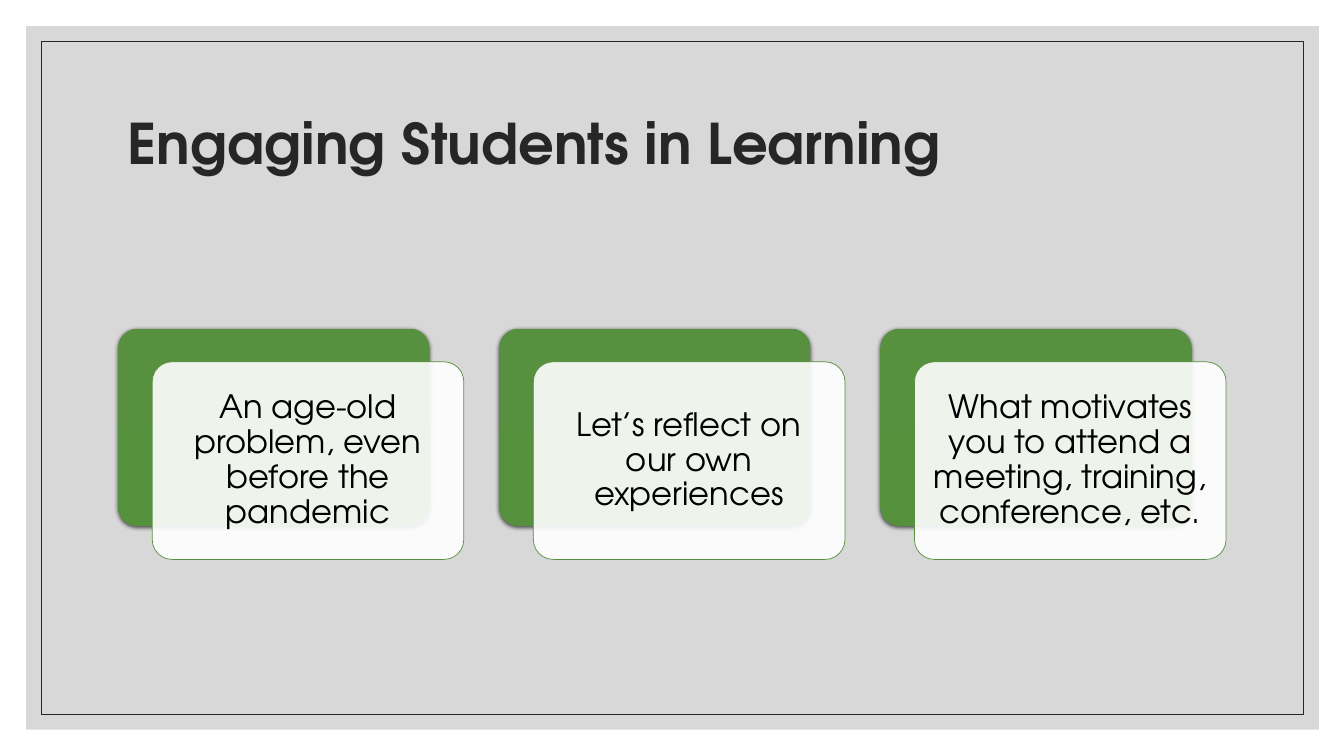
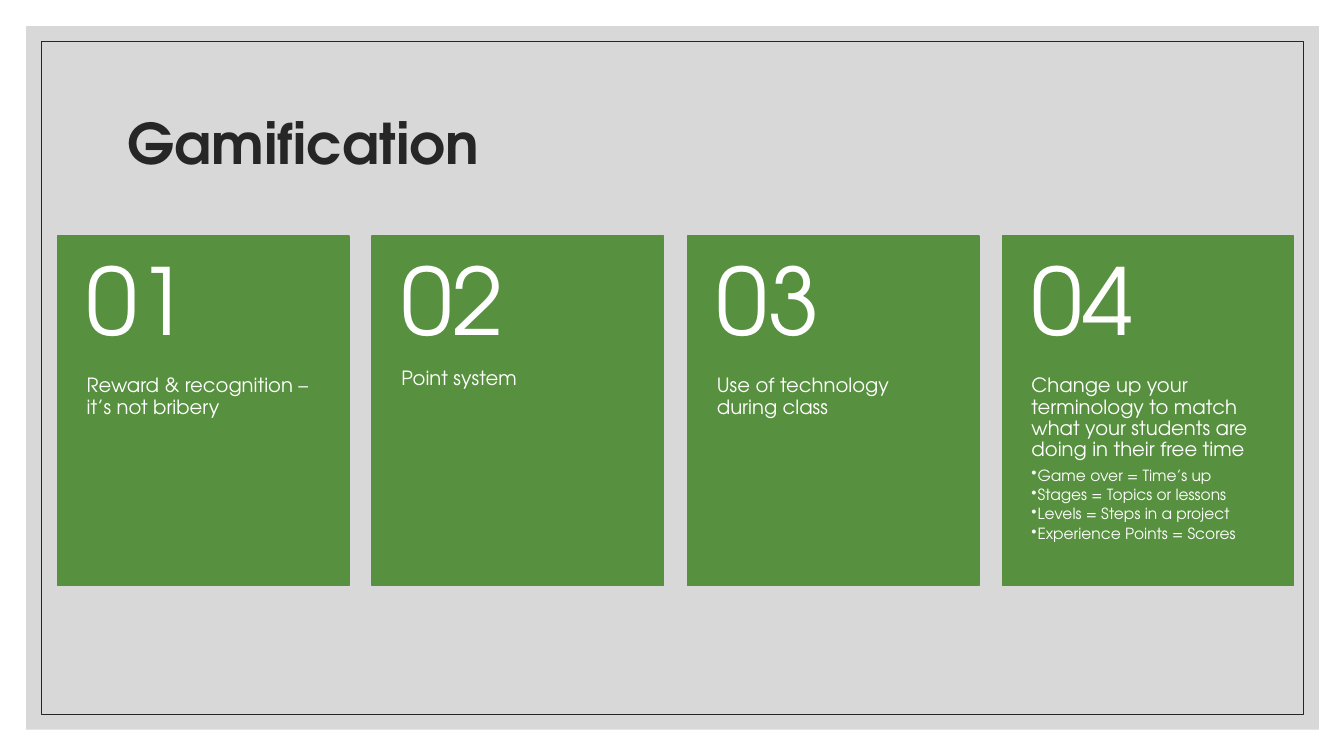
from lxml.etree import SubElement
from pptx import Presentation
from pptx.dml.color import RGBColor
from pptx.enum.shapes import MSO_SHAPE as SHAPE
from pptx.enum.text import MSO_ANCHOR as ANCHOR, PP_ALIGN as ALIGN
from pptx.oxml.ns import qn
from pptx.util import Emu, Pt

FONT = "TeX Gyre Adventor"
COLORS = {
    "paper": "BFBFBF",
    "ink": "262626",
    "green": "57903F",
    "green_end": "55913C",
    "white": "FFFFFF",
    "black": "000000",
}
TITLE_BOX = (117, 70, 1100, 150)
REFLECTIONS = [
    "An age-old problem, even before the pandemic",
    "Let’s reflect on our own experiences",
    "What motivates you to attend a meeting, training, conference, etc.",
]
STRATEGIES = [
    ("Reward & recognition – it’s not bribery", []),
    ("Point system", []),
    ("Use of technology during class", []),
    (
        "Change up your terminology to match what your students are doing in their free time",
        [
            "Game over = Time’s up",
            "Stages = Topics or lessons",
            "Levels = Steps in a project",
            "Experience Points = Scores",
        ],
    ),
]


def px(n):
    """Convert px, 100 to the inch, to EMU."""
    return Emu(round(n * 9144))


def rgb(name):
    return RGBColor.from_string(COLORS[name])


def add_box(s, box, kind=SHAPE.RECTANGLE, fill=None, alpha=None, line=None, weight=0.5):
    sp = s.shapes.add_shape(kind, *map(px, box))
    sp.shadow.inherit = False
    if fill:
        sp.fill.solid()
        sp.fill.fore_color.rgb = rgb(fill)
    else:
        sp.fill.background()
    if alpha:
        color = sp.element.spPr.find(qn("a:solidFill")).find(qn("a:srgbClr"))
        SubElement(color, qn("a:alpha"), val=str(alpha * 1000))
    if line:
        sp.line.color.rgb = rgb(line)
        sp.line.width = Pt(weight)
    else:
        sp.line.fill.background()
    return sp


def add_shadow(sp):
    effects = sp.element.spPr.find(qn("a:effectLst"))
    shadow = SubElement(
        effects, qn("a:outerShdw"), blurRad=str(Pt(3)), dist=str(Pt(1)), dir="5400000", rotWithShape="0"
    )
    color = SubElement(shadow, qn("a:srgbClr"), val=COLORS["black"])
    SubElement(color, qn("a:alpha"), val="63000")


def set_frame(tf, insets=(10, 5, 10, 5), anchor=ANCHOR.MIDDLE):
    tf.word_wrap = True
    tf.vertical_anchor = anchor
    tf.margin_left, tf.margin_top, tf.margin_right, tf.margin_bottom = map(px, insets)


def style_paragraph(p, size, color, after=0.35, align=ALIGN.LEFT, bold=False):
    """Format a paragraph; after is the space below as a share of the size."""
    p.alignment = align
    p.line_spacing = 0.9
    p.space_after = Pt(round(size * after))
    for r in p.runs:
        r.font.name = FONT
        r.font.size = Pt(size)
        r.font.bold = bold
        r.font.color.rgb = rgb(color)


def add_bullet(p):
    p.level = 1
    pPr = p._p.get_or_add_pPr()
    pPr.set("marL", str(px(6)))
    pPr.set("indent", str(px(-6)))
    SubElement(pPr, qn("a:buChar"), char="•")


def add_text(s, box, text, size, color, insets=(10, 5, 10, 5), anchor=ANCHOR.MIDDLE, **style):
    tf = s.shapes.add_textbox(*map(px, box)).text_frame
    set_frame(tf, insets, anchor)
    p = tf.paragraphs[0]
    p.text = text
    style_paragraph(p, size, color, **style)
    return tf


def new_slide(prs, title):
    """Add a slide with the shared grey panel, thin frame and title."""
    s = prs.slides.add_slide(prs.slide_layouts[6])
    add_box(s, (26, 26, 1282, 698), fill="paper", alpha=60)
    add_box(s, (41, 41, 1252, 668), line="ink")
    add_text(s, TITLE_BOX, title, 40, "ink", after=0, bold=True)
    return s


def columns(box, count, width):
    """Yield the left edges of equally spaced columns that fill the box."""
    x, _, w, _ = box
    for i in range(count):
        yield x + round(i * (w - width) / (count - 1))


def add_layered_card(s, box, text):
    """Place a green card with a white panel offset over it."""
    x, y, w, h = box
    dx, dy = 34, 33
    size = (w - dx, h - dy)
    back = add_box(s, (x, y, *size), SHAPE.ROUNDED_RECTANGLE)
    back.fill.gradient()
    back.fill.gradient_angle = 270
    for stop, name in zip(back.fill.gradient_stops, ("green", "green_end")):
        stop.color.rgb = rgb(name)
    add_shadow(back)
    front = add_box(s, (x + dx, y + dy, *size), SHAPE.ROUNDED_RECTANGLE, "white", 90, "green")
    for sp in (back, front):
        sp.adjustments[0] = 0.1
    set_frame(front.text_frame, (10, 10, 10, 10))
    p = front.text_frame.paragraphs[0]
    p.text = text
    style_paragraph(p, 23, "black", align=ALIGN.CENTER)


def add_numbered_card(s, box, number, text, bullets):
    x, y, w, h = box
    head = 139
    add_box(s, box, fill="green", line="green", weight=1)
    tf = add_text(s, (x, y + head, w, h - head), text, 14, "white", (29, 0, 29, 36), ANCHOR.TOP)
    for bullet in bullets:
        p = tf.add_paragraph()
        p.text = bullet
        style_paragraph(p, 11, "white", after=0.15)
        add_bullet(p)
    add_text(s, (x, y, w, head), f"{number:02}", 66, "white", (29, 18, 29, 18))


def build_engaging(prs, box=(117, 326, 1099, 229)):
    s = new_slide(prs, "Engaging Students in Learning")
    _, y, _, h = box
    width = 343
    for x, text in zip(columns(box, len(REFLECTIONS), width), REFLECTIONS):
        add_layered_card(s, (x, y, width, h), text)


def build_gamification(prs, box=(57, 234, 1226, 347)):
    s = new_slide(prs, "Gamification")
    _, y, _, h = box
    width = 289
    lefts = columns(box, len(STRATEGIES), width)
    for number, (x, (text, bullets)) in enumerate(zip(lefts, STRATEGIES), 1):
        add_numbered_card(s, (x, y, width, h), number, text, bullets)


def main():
    prs = Presentation()
    prs.slide_width, prs.slide_height = px(1333), px(750)
    build_engaging(prs)
    build_gamification(prs)
    prs.save("out.pptx")


if __name__ == "__main__":
    main()
